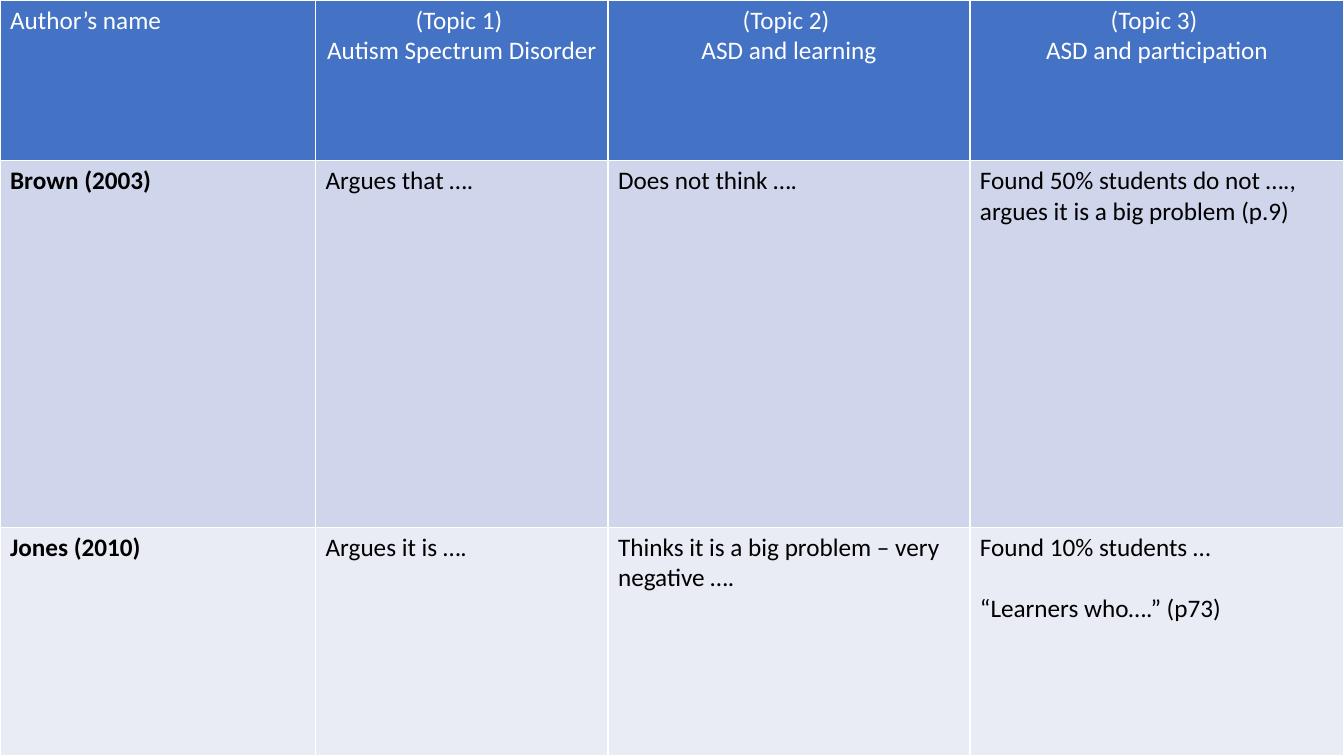
from pptx import Presentation
from pptx.dml.color import RGBColor
from pptx.enum.text import PP_ALIGN
from pptx.util import Inches, Pt

LEFT, CENTER = PP_ALIGN.LEFT, PP_ALIGN.CENTER
PAGE_WIDTH, PAGE_HEIGHT = 13.33, 7.5
COLUMN_WIDTHS = [3.13, 2.9, 3.59, 3.71]
ROW_HEIGHTS = [1.59, 3.64, 2.27]
COLORS = {
    "header": "4472C4",
    "band_dark": "CFD5EA",
    "band_light": "E9EBF5",
    "light_text": "FFFFFF",
    "dark_text": "000000",
}

# Each line of a cell is one paragraph
LITERATURE = [
    ["Author’s name", "(Topic 1) \nAutism Spectrum Disorder",
     "(Topic 2) \nASD and learning", "(Topic 3) \nASD and participation"],
    ["Brown (2003)", "Argues that ….", "Does not think ….",
     "Found 50% students do not …., argues it is a big problem (p.9)"],
    ["Jones (2010)", "Argues it is ….",
     "Thinks it is a big problem – very negative ….",
     "Found 10% students …\n“Learners who….” (p73)"],
]


class MatrixSlide:
    """Style and current slide of a literature matrix."""

    font_name = "Calibri"
    font_size = Pt(18)
    quote_gap = Pt(22)

    def __init__(self, deck):
        self.page = deck.slides.add_slide(deck.slide_layouts[6])

    def color(self, name):
        return RGBColor.from_string(COLORS[name])

    def cell(self, cell, text, fill, ink, bold, align, gap):
        cell.fill.solid()
        cell.fill.fore_color.rgb = self.color(fill)
        cell.text_frame.text = text
        for index, para in enumerate(cell.text_frame.paragraphs):
            para.alignment = align
            para.font.name = self.font_name
            para.font.size = self.font_size
            para.font.bold = bold
            para.font.color.rgb = self.color(ink)
            if index:
                para.space_before = gap

    def matrix(self, rows):
        table = self.page.shapes.add_table(
            len(rows), len(rows[0]), 0, 0,
            Inches(PAGE_WIDTH), Inches(PAGE_HEIGHT)).table
        for column, width in zip(table.columns, COLUMN_WIDTHS):
            column.width = Inches(width)
        for row, height in zip(table.rows, ROW_HEIGHTS):
            row.height = Inches(height)

        # Header on top, then alternating bands with bold authors
        for r, texts in enumerate(rows):
            header = r == 0
            band = "band_dark" if r % 2 else "band_light"
            for c, text in enumerate(texts):
                self.cell(
                    table.cell(r, c), text,
                    fill="header" if header else band,
                    ink="light_text" if header else "dark_text",
                    bold=not header and c == 0,
                    align=CENTER if header and c else LEFT,
                    gap=Pt(0) if header else self.quote_gap)


def main():
    deck = Presentation()
    deck.slide_width = Inches(PAGE_WIDTH)
    deck.slide_height = Inches(PAGE_HEIGHT)
    MatrixSlide(deck).matrix(LITERATURE)
    deck.save("out.pptx")


if __name__ == "__main__":
    main()
